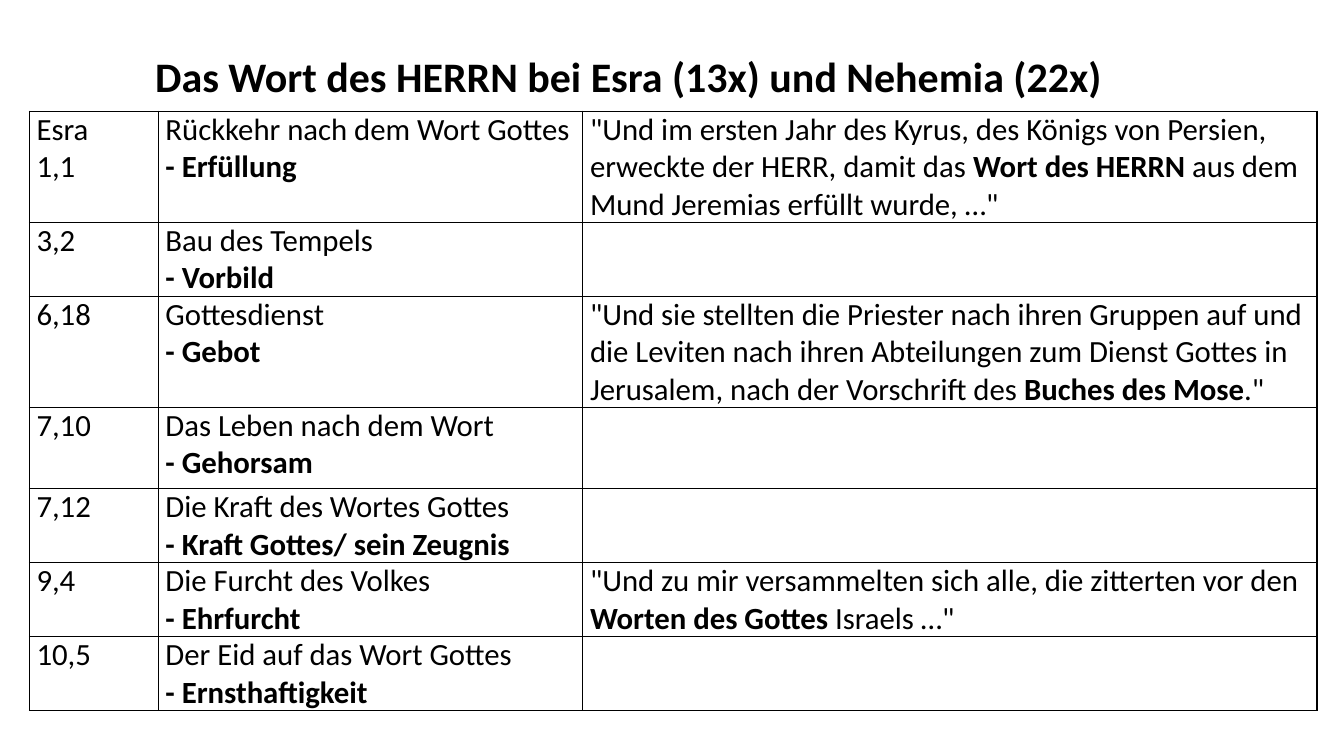
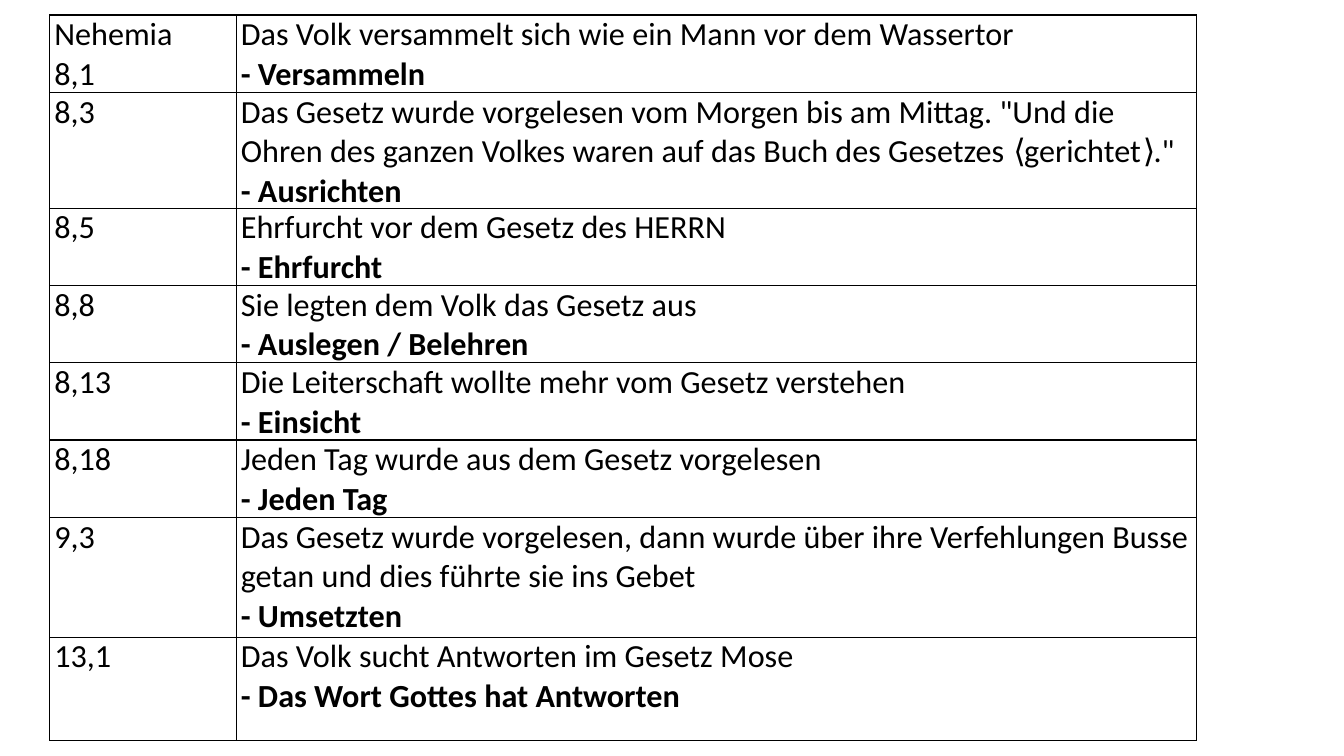
from dataclasses import dataclass

from lxml.etree import SubElement
from pptx import Presentation
from pptx.dml.color import RGBColor
from pptx.enum.text import MSO_AUTO_SIZE
from pptx.oxml.ns import qn
from pptx.util import Cm, Pt


@dataclass(frozen=True)
class Theme:
    font: str = "Calibri"
    ink: str = "000000"
    title_size: int = 30
    esra_size: int = 22
    nehemia_size: int = 23
    border_width: int = 1


theme = Theme()


def write_paragraph(paragraph, text, size):
    for index, part in enumerate(text.split("**")):
        if part:
            run = paragraph.add_run()
            run.text = part
            run.font.name = theme.font
            run.font.size = Pt(size)
            run.font.bold = index % 2 == 1
            run.font.color.rgb = RGBColor.from_string(theme.ink)


def add_verse_table(slide, left, top, widths, heights, rows, size, inset):
    frame = slide.shapes.add_table(
        len(rows), len(widths), Cm(left), Cm(top), Cm(sum(widths)), Cm(sum(heights))
    )
    table = frame.table
    table.first_row = False
    table.horz_banding = False
    for column, width in zip(table.columns, widths):
        column.width = Cm(width)
    for row, height, texts in zip(table.rows, heights, rows):
        row.height = Cm(height)
        for cell, text in zip(row.cells, texts):
            cell.margin_left = cell.margin_right = Cm(inset)
            cell.margin_top = cell.margin_bottom = 0
            text_frame = cell.text_frame
            for index, line in enumerate(text.split("\n")):
                paragraph = text_frame.add_paragraph() if index else text_frame.paragraphs[0]
                paragraph.font.size = Pt(size)
                write_paragraph(paragraph, line, size)
            properties = cell._tc.get_or_add_tcPr()
            for side in ("a:lnL", "a:lnR", "a:lnT", "a:lnB"):
                border = SubElement(properties, qn(side), w=str(Pt(theme.border_width)))
                fill = SubElement(border, qn("a:solidFill"))
                SubElement(fill, qn("a:srgbClr"), val=theme.ink)
            cell.fill.background()


presentation = Presentation()
presentation.slide_width = Cm(33.87)
presentation.slide_height = Cm(19.05)
blank_layout = presentation.slide_layouts[6]

esra_slide = presentation.slides.add_slide(blank_layout)
title = esra_slide.shapes.add_textbox(Cm(3.66), Cm(1.07), Cm(25.45), Cm(1.57))
title.text_frame.word_wrap = True
title.text_frame.auto_size = MSO_AUTO_SIZE.SHAPE_TO_FIT_TEXT
title_paragraph = title.text_frame.paragraphs[0]
title_paragraph.line_spacing = 1.07
title_paragraph.space_before = Pt(12)
write_paragraph(
    title_paragraph,
    "**Das Wort des HERRN bei Esra (13x) und Nehemia (22x)**",
    theme.title_size,
)

esra_rows = [
    (
        "Esra\n1,1",
        "Rückkehr nach dem Wort Gottes\n**- Erfüllung**",
        '"Und im ersten Jahr des Kyrus, des Königs von Persien, erweckte der HERR, '
        'damit das **Wort des HERRN** aus dem Mund Jeremias erfüllt wurde, …"',
    ),
    ("3,2", "Bau des Tempels\n**- Vorbild**", ""),
    (
        "6,18",
        "Gottesdienst\n**- Gebot**",
        '"Und sie stellten die Priester nach ihren Gruppen auf und die Leviten nach '
        "ihren Abteilungen zum Dienst Gottes in Jerusalem, nach der Vorschrift des "
        '**Buches des Mose**."',
    ),
    ("7,10", "Das Leben nach dem Wort\n**- Gehorsam**", ""),
    ("7,12", "Die Kraft des Wortes Gottes\n**- Kraft Gottes/ sein Zeugnis**", ""),
    (
        "9,4",
        "Die Furcht des Volkes\n**- Ehrfurcht**",
        '"Und zu mir versammelten sich alle, die zitterten vor den '
        '**Worten des Gottes** Israels …"',
    ),
    ("10,5", "Der Eid auf das Wort Gottes\n**- Ernsthaftigkeit**", ""),
]
add_verse_table(
    esra_slide,
    left=0.74,
    top=2.8,
    widths=[3.25, 10.7, 18.5],
    heights=[2.8, 1.86, 2.8, 2.05, 1.86, 1.86, 1.86],
    rows=esra_rows,
    size=theme.esra_size,
    inset=0.18,
)

nehemia_slide = presentation.slides.add_slide(blank_layout)
nehemia_rows = [
    ("Nehemia\n8,1", "Das Volk versammelt sich wie ein Mann vor dem Wassertor\n**- Versammeln**"),
    (
        "8,3",
        'Das Gesetz wurde vorgelesen vom Morgen bis am Mittag. "Und die Ohren des '
        'ganzen Volkes waren auf das Buch des Gesetzes ⟨gerichtet⟩."\n**- Ausrichten**',
    ),
    ("8,5", "Ehrfurcht vor dem Gesetz des HERRN\n**- Ehrfurcht**"),
    ("8,8", "Sie legten dem Volk das Gesetz aus\n**- Auslegen / Belehren**"),
    ("8,13", "Die Leiterschaft wollte mehr vom Gesetz verstehen\n**- Einsicht**"),
    ("8,18", "Jeden Tag wurde aus dem Gesetz vorgelesen\n**- Jeden Tag**"),
    (
        "9,3",
        "Das Gesetz wurde vorgelesen, dann wurde über ihre Verfehlungen Busse getan "
        "und dies führte sie ins Gebet\n**- Umsetzten**",
    ),
    ("13,1", "Das Volk sucht Antworten im Gesetz Mose\n**- Das Wort Gottes hat Antworten**"),
]
add_verse_table(
    nehemia_slide,
    left=1.25,
    top=0.38,
    widths=[4.7, 24.2],
    heights=[1.94, 2.92, 1.94, 1.94, 1.94, 1.94, 3.02, 2.6],
    rows=nehemia_rows,
    size=theme.nehemia_size,
    inset=0.12,
)

presentation.save("out.pptx")
